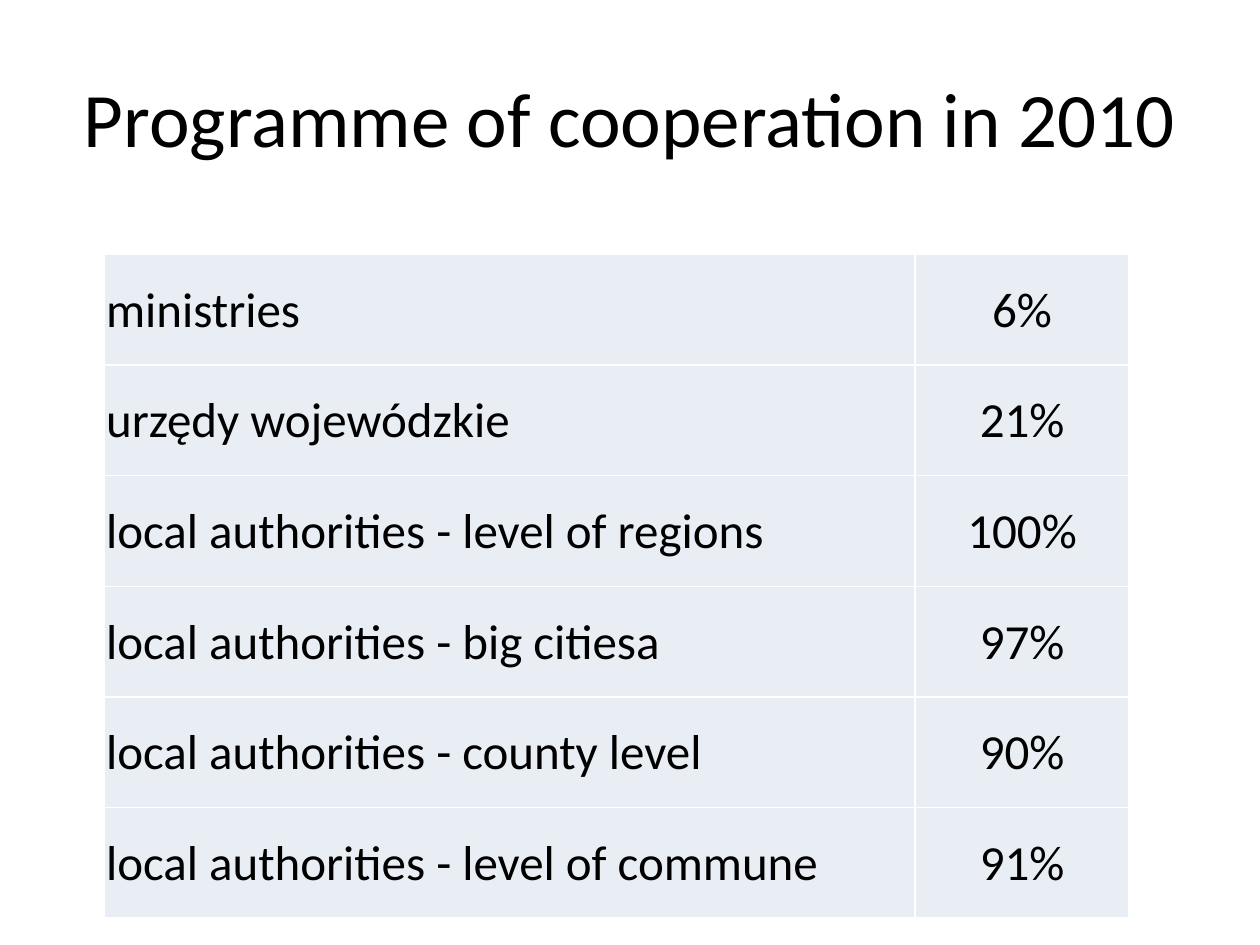
from lxml import etree
from pptx import Presentation
from pptx.dml.color import RGBColor
from pptx.enum.text import MSO_ANCHOR, PP_ALIGN
from pptx.oxml.ns import qn
from pptx.util import Cm, Pt

MIDDLE = MSO_ANCHOR.MIDDLE
LEFT, CENTER = PP_ALIGN.LEFT, PP_ALIGN.CENTER
BLACK = RGBColor(0x00, 0x00, 0x00)
WHITE = RGBColor(0xFF, 0xFF, 0xFF)
PALE_BLUE = RGBColor(0xE9, 0xED, 0xF4)
FONT = "Calibri"

HEADING = "Programme of cooperation in 2010"
SHARES = [
    ("ministries", "6%"),
    ("urzędy wojewódzkie", "21%"),
    ("local authorities - level of regions", "100%"),
    ("local authorities - big citiesa", "97%"),
    ("local authorities - county level", "90%"),
    ("local authorities - level of commune", "91%"),
]
COLUMNS = [(Cm(16.34), LEFT), (Cm(4.31), CENTER)]
ROW_HEIGHT = Cm(2.23)


def write(frame, text, size, alignment):
    frame.text = text
    paragraph = frame.paragraphs[0]
    paragraph.alignment = alignment
    font = paragraph.runs[0].font
    font.name, font.size = FONT, Pt(size)
    font.color.rgb = BLACK


def add_borders(cell):
    properties = cell._tc.get_or_add_tcPr()
    for side in ("lnL", "lnR", "lnT", "lnB"):
        border = etree.SubElement(properties, qn(f"a:{side}"), w=str(Pt(1)))
        fill = etree.SubElement(border, qn("a:solidFill"))
        etree.SubElement(fill, qn("a:srgbClr"), val=str(WHITE))


def add_share_table(slide):
    width = sum(column_width for column_width, _ in COLUMNS)
    table = slide.shapes.add_table(
        len(SHARES), len(COLUMNS), Cm(2.11), Cm(5.13),
        width, ROW_HEIGHT * len(SHARES)).table
    table.first_row = table.horz_banding = False
    for column, (column_width, _) in zip(table.columns, COLUMNS):
        column.width = column_width
    for row, share in zip(table.rows, SHARES):
        row.height = ROW_HEIGHT
        for cell, text, (_, alignment) in zip(row.cells, share, COLUMNS):
            add_borders(cell)
            cell.fill.solid()
            cell.fill.fore_color.rgb = PALE_BLUE
            cell.vertical_anchor = MIDDLE
            cell.margin_left = cell.margin_right = cell.margin_top = Cm(0.03)
            cell.margin_bottom = 0
            write(cell.text_frame, text, 28, alignment)


def main():
    deck = Presentation()
    deck.slide_width, deck.slide_height = Cm(25.4), Cm(19.05)
    slide = deck.slides.add_slide(deck.slide_layouts[5])
    title = slide.shapes.title
    title.left, title.top = Cm(1.27), Cm(0.76)
    title.width, title.height = Cm(22.86), Cm(3.18)
    title.text_frame.vertical_anchor = MIDDLE
    write(title.text_frame, HEADING, 44, CENTER)
    add_share_table(slide)
    deck.save("out.pptx")


if __name__ == "__main__":
    main()
